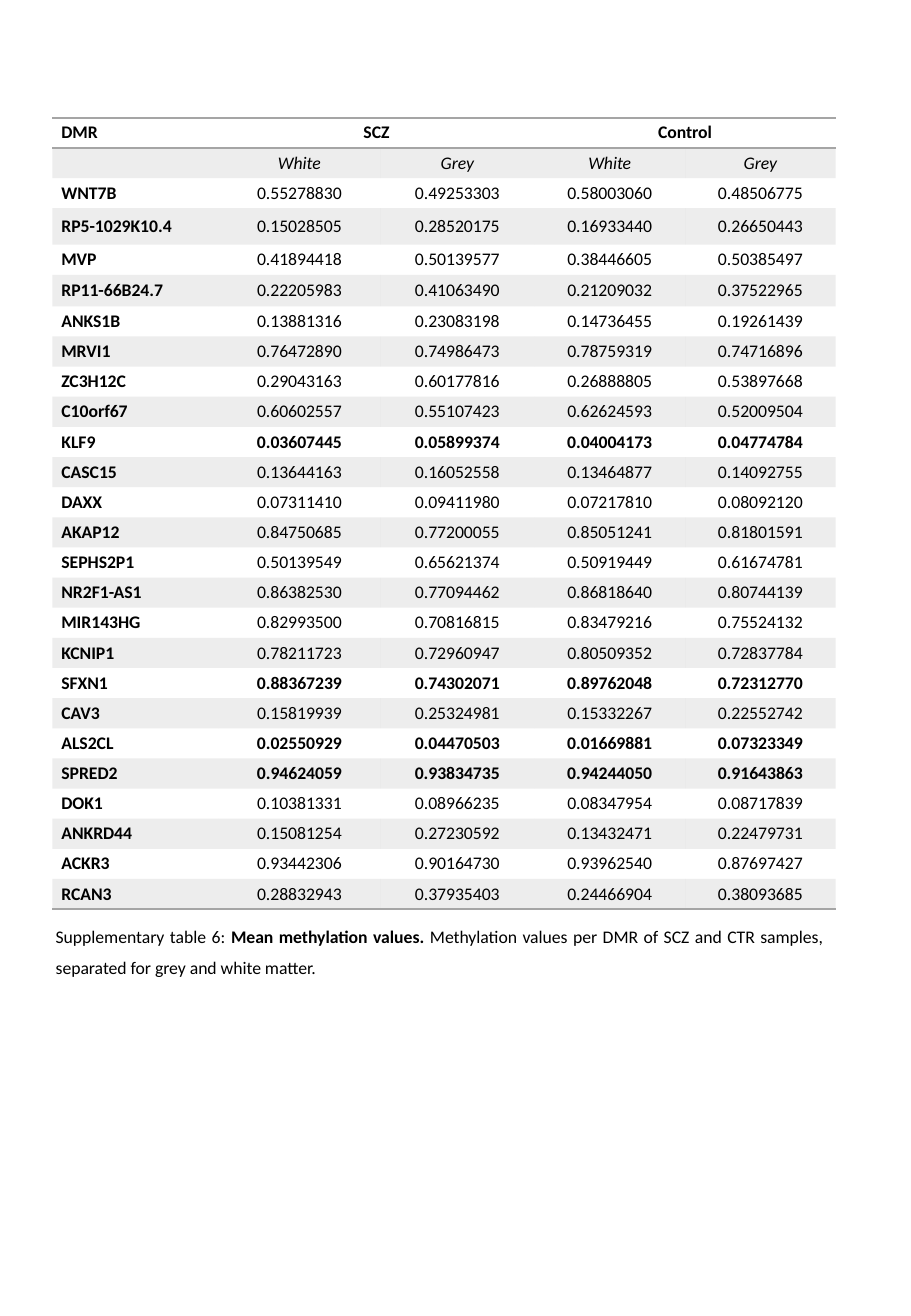
from lxml.etree import SubElement
from pptx import Presentation
from pptx.dml.color import RGBColor
from pptx.enum.text import MSO_ANCHOR, MSO_AUTO_SIZE, PP_ALIGN
from pptx.oxml.ns import qn
from pptx.util import Pt

BLACK = RGBColor(0x00, 0x00, 0x00)
GREY = RGBColor(0xA5, 0xA5, 0xA5)
FONT = "Calibri"
SIZE = 10.5
PLAIN = "{2D5ABB26-0587-4C30-8999-92F81FD0307C}"
WIDTHS = [98.6, 95.8, 91.4, 89.3, 89.3]
ROW = 17.88
TALL = {"RP5-1029K10.4": 21.6, "RP11-66B24.7": 18.7}
STRONG = {"KLF9", "SFXN1", "ALS2CL", "SPRED2"}
HEADS = [["DMR", "SCZ", "", "Control", ""],
         ["", "White", "Grey", "White", "Grey"]]
DATA = [
    "WNT7B 0.55278830 0.49253303 0.58003060 0.48506775",
    "RP5-1029K10.4 0.15028505 0.28520175 0.16933440 0.26650443",
    "MVP 0.41894418 0.50139577 0.38446605 0.50385497",
    "RP11-66B24.7 0.22205983 0.41063490 0.21209032 0.37522965",
    "ANKS1B 0.13881316 0.23083198 0.14736455 0.19261439",
    "MRVI1 0.76472890 0.74986473 0.78759319 0.74716896",
    "ZC3H12C 0.29043163 0.60177816 0.26888805 0.53897668",
    "C10orf67 0.60602557 0.55107423 0.62624593 0.52009504",
    "KLF9 0.03607445 0.05899374 0.04004173 0.04774784",
    "CASC15 0.13644163 0.16052558 0.13464877 0.14092755",
    "DAXX 0.07311410 0.09411980 0.07217810 0.08092120",
    "AKAP12 0.84750685 0.77200055 0.85051241 0.81801591",
    "SEPHS2P1 0.50139549 0.65621374 0.50919449 0.61674781",
    "NR2F1-AS1 0.86382530 0.77094462 0.86818640 0.80744139",
    "MIR143HG 0.82993500 0.70816815 0.83479216 0.75524132",
    "KCNIP1 0.78211723 0.72960947 0.80509352 0.72837784",
    "SFXN1 0.88367239 0.74302071 0.89762048 0.72312770",
    "CAV3 0.15819939 0.25324981 0.15332267 0.22552742",
    "ALS2CL 0.02550929 0.04470503 0.01669881 0.07323349",
    "SPRED2 0.94624059 0.93834735 0.94244050 0.91643863",
    "DOK1 0.10381331 0.08966235 0.08347954 0.08717839",
    "ANKRD44 0.15081254 0.27230592 0.13432471 0.22479731",
    "ACKR3 0.93442306 0.90164730 0.93962540 0.87697427",
    "RCAN3 0.28832943 0.37935403 0.24466904 0.38093685",
]


def add_run(para, text, bold=False, slant=False):
    run = para.add_run()
    run.text = text
    font = run.font
    font.name, font.size = FONT, Pt(SIZE)
    font.bold, font.italic = bold, slant
    font.color.rgb = BLACK


def add_edge(cell, side):
    line = SubElement(cell._tc.get_or_add_tcPr(), qn("a:" + side), w=str(Pt(1)))
    fill = SubElement(line, qn("a:solidFill"))
    SubElement(fill, qn("a:srgbClr"), val=str(GREY))


def shade(cell, band):
    if not band:
        cell.fill.background()
        return
    cell.fill.solid()
    cell.fill.fore_color.rgb = GREY
    tint = cell._tc.tcPr.find(qn("a:solidFill")).find(qn("a:srgbClr"))
    SubElement(tint, qn("a:alpha"), val="20000")


def fill_cell(cell, text, center, bold, slant):
    cell.vertical_anchor = MSO_ANCHOR.MIDDLE
    cell.margin_left = cell.margin_right = Pt(5.4)
    cell.margin_top = cell.margin_bottom = Pt(0)
    para = cell.text_frame.paragraphs[0]
    para.alignment = PP_ALIGN.CENTER if center else PP_ALIGN.LEFT
    if text:
        add_run(para, text, bold, slant)
    else:
        SubElement(para._p, qn("a:endParaRPr"), sz=str(int(SIZE * 100)))


def add_grid(slide, left, top, width, height):
    rows = HEADS + [line.split() for line in DATA]
    last = len(rows) - 1
    frame = slide.shapes.add_table(len(rows), len(WIDTHS), Pt(left), Pt(top),
                                   Pt(width), Pt(height))
    table = frame.table
    table.first_row = table.horz_banding = False
    table._tbl.tblPr.find(qn("a:tableStyleId")).text = PLAIN
    for col, wide in zip(table.columns, WIDTHS):
        col.width = Pt(wide)
    for r, row in enumerate(rows):
        table.rows[r].height = Pt(TALL.get(row[0], ROW))
        for c, text in enumerate(row):
            cell = table.cell(r, c)
            bold = r == 0 or c == 0 or row[0] in STRONG
            fill_cell(cell, text, c > 0, bold, r == 1)
            if r == 0:
                add_edge(cell, "lnT")
            if r in (0, last):
                add_edge(cell, "lnB")
            shade(cell, r % 2 == 1)
    for c in (1, 3):
        table.cell(0, c).merge(table.cell(0, c + 1))


def add_note(slide, left, top, width, height):
    box = slide.shapes.add_textbox(Pt(left), Pt(top), Pt(width), Pt(height))
    frame = box.text_frame
    frame.word_wrap = True
    frame.auto_size = MSO_AUTO_SIZE.SHAPE_TO_FIT_TEXT
    frame.vertical_anchor = MSO_ANCHOR.MIDDLE
    para = frame.paragraphs[0]
    para.alignment = PP_ALIGN.JUSTIFY
    para.line_spacing = 1.5
    add_run(para, "Supplementary table 6: ")
    add_run(para, "Mean methylation values.", bold=True)
    add_run(para, " Methylation values per DMR of SCZ and CTR samples, "
                  "separated for grey and white matter.")


def main():
    deck = Presentation()
    deck.slide_width, deck.slide_height = Pt(540), Pt(779.76)
    slide = deck.slides.add_slide(deck.slide_layouts[6])
    add_note(slide, 25.9, 539.3, 469.4, 43.2)
    add_grid(slide, 31, 69.8, 464.4, 469.4)
    deck.save("out.pptx")


if __name__ == "__main__":
    main()
